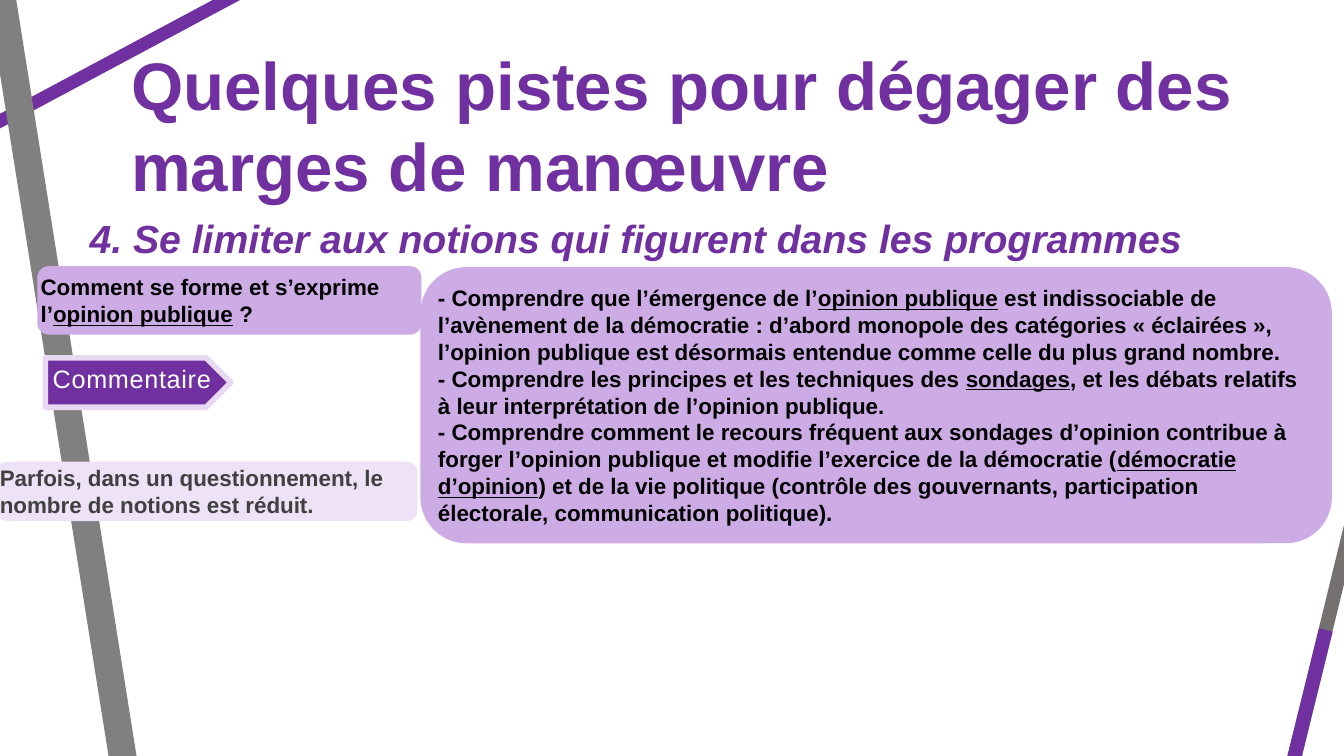
import pptx
import pptx.dml.color
import pptx.enum.shapes
import pptx.enum.text
import pptx.oxml.ns
import pptx.util
from lxml import etree

Inches = pptx.util.Inches
Pt = pptx.util.Pt
RGBColor = pptx.dml.color.RGBColor
Shape = pptx.enum.shapes.MSO_SHAPE
Align = pptx.enum.text.PP_ALIGN
Anchor = pptx.enum.text.MSO_ANCHOR
AutoSize = pptx.enum.text.MSO_AUTO_SIZE

PURPLE = RGBColor(0x70, 0x30, 0xA0)
LILAC = RGBColor(0xCD, 0xAC, 0xE6)
PALE_LILAC = RGBColor(0xED, 0xE2, 0xF6)
OUTLINE_LILAC = RGBColor(0xE8, 0xD9, 0xF3)
GRAY = RGBColor(0x80, 0x80, 0x80)
WARM_GRAY = RGBColor(0x76, 0x71, 0x71)
DARK_GRAY = RGBColor(0x40, 0x40, 0x40)
BLACK = RGBColor(0, 0, 0)
WHITE = RGBColor(0xFF, 0xFF, 0xFF)
FONT = "Arial"

# Every second segment of a paragraph is underlined.
TITLE = [["Quelques pistes pour dégager des marges de manœuvre"]]
SUBTITLE = [["4. Se limiter aux notions qui figurent dans les programmes"]]
QUESTION = [["Comment se forme et s’exprime l’", "opinion publique", " ?"]]
OBJECTIVES = [
    ["- Comprendre que l’émergence de l’", "opinion publique",
     " est indissociable de l’avènement de la démocratie : d’abord monopole des catégories "
     "« éclairées », l’opinion publique est désormais entendue comme celle du plus grand nombre."],
    ["- Comprendre les principes et les techniques des ", "sondages",
     ", et les débats relatifs à leur interprétation de l’opinion publique."],
    ["- Comprendre comment le recours fréquent aux sondages d’opinion contribue à forger "
     "l’opinion publique et modifie l’exercice de la démocratie (", "démocratie d’opinion",
     ") et de la vie politique (contrôle des gouvernants, participation électorale, "
     "communication politique)."],
]
COMMENT = [["Parfois, dans un questionnement, le nombre de notions est réduit."]]
COMMENT_LABEL = [["Commentaire"]]

STRIPES = [
    ((-2.09, 2.32), (5.16, -1.56), PURPLE, 9.25),
    ((0, -0.14), (1.26, 7.78), GRAY, 19.75),
    ((12.26, 9.89), (13.65, 4.19), WARM_GRAY, 10),
    ((12.18, 10.15), (13.15, 6.25), PURPLE, 10),
]
CARDS = [
    (QUESTION, (0.37, 2.64, 3.81, 0.68), LILAC, BLACK, (0, 0.04, 0.04, 0.04)),
    (OBJECTIVES, (4.17, 2.65, 9.04, 2.74), LILAC, BLACK, (0.04, 0.04, 0.04, 0.04)),
    (COMMENT, (-0.03, 4.58, 4.17, 0.59), PALE_LILAC, DARK_GRAY, (0, 0, 0, 0)),
]


def write_text(shape, paragraphs, *, size, color, insets, bold=True, italic=False,
               align=Align.LEFT, anchor=Anchor.MIDDLE, grow=True, spacing=None):
    frame = shape.text_frame
    frame.word_wrap = True
    frame.auto_size = AutoSize.SHAPE_TO_FIT_TEXT if grow else AutoSize.NONE
    frame.vertical_anchor = anchor
    (frame.margin_left, frame.margin_top,
     frame.margin_right, frame.margin_bottom) = map(Inches, insets)
    for number, segments in enumerate(paragraphs):
        paragraph = frame.add_paragraph() if number else frame.paragraphs[0]
        paragraph.alignment = align
        for position, segment in enumerate(segments):
            run = paragraph.add_run()
            run.text = segment
            font = run.font
            font.name, font.size, font.bold, font.italic = FONT, Pt(size), bold, italic
            font.color.rgb = color
            if position % 2:
                font.underline = True
            if spacing:
                run._r.get_or_add_rPr().set("spc", str(int(spacing * 100)))


def add_stripe(slide, start, end, color, width):
    stripe = slide.shapes.add_connector(
        pptx.enum.shapes.MSO_CONNECTOR.STRAIGHT, *map(Inches, start + end))
    stripe.line.color.rgb = color
    stripe.line.width = Pt(width)
    etree.SubElement(stripe._element.spPr, pptx.oxml.ns.qn("a:effectLst"))


def add_filled_shape(slide, kind, box, fill, adjustment):
    shape = slide.shapes.add_shape(kind, *map(Inches, box))
    shape.adjustments[0] = adjustment
    shape.shadow.inherit = False
    shape.fill.solid()
    shape.fill.fore_color.rgb = fill
    shape.line.fill.background()
    return shape


def main():
    presentation = pptx.Presentation()
    presentation.slide_width = Inches(13.33)
    presentation.slide_height = Inches(7.5)
    slide = presentation.slides.add_slide(presentation.slide_layouts[5])

    title = slide.shapes.title
    title.left, title.top, title.width, title.height = map(Inches, (1.26, 0.39, 11.71, 1.68))
    write_text(title, TITLE, size=48, color=PURPLE, insets=(0.04,) * 4, anchor=Anchor.TOP)

    for stripe in STRIPES:
        add_stripe(slide, *stripe)

    subtitle = slide.shapes.add_textbox(*map(Inches, (0.79, 2.08, 12.2, 0.57)))
    write_text(subtitle, SUBTITLE, size=28, color=PURPLE, insets=(0.1, 0.05, 0.1, 0.05),
               italic=True, align=Align.JUSTIFY, anchor=Anchor.TOP)

    for text, box, fill, color, insets in CARDS:
        card = add_filled_shape(slide, Shape.ROUNDED_RECTANGLE, box, fill, 0.167)
        write_text(card, text, size=16, color=color, insets=insets)

    label = add_filled_shape(slide, Shape.PENTAGON, (0.45, 3.55, 1.84, 0.49), PURPLE, 0.5)
    label.line.color.rgb = OUTLINE_LILAC
    label.line.width = Pt(4)
    write_text(label, COMMENT_LABEL, size=18, color=WHITE, insets=(0, 0, 0, 0.08),
               bold=False, align=Align.CENTER, grow=False, spacing=0.5)

    presentation.save("out.pptx")


if __name__ == "__main__":
    main()
